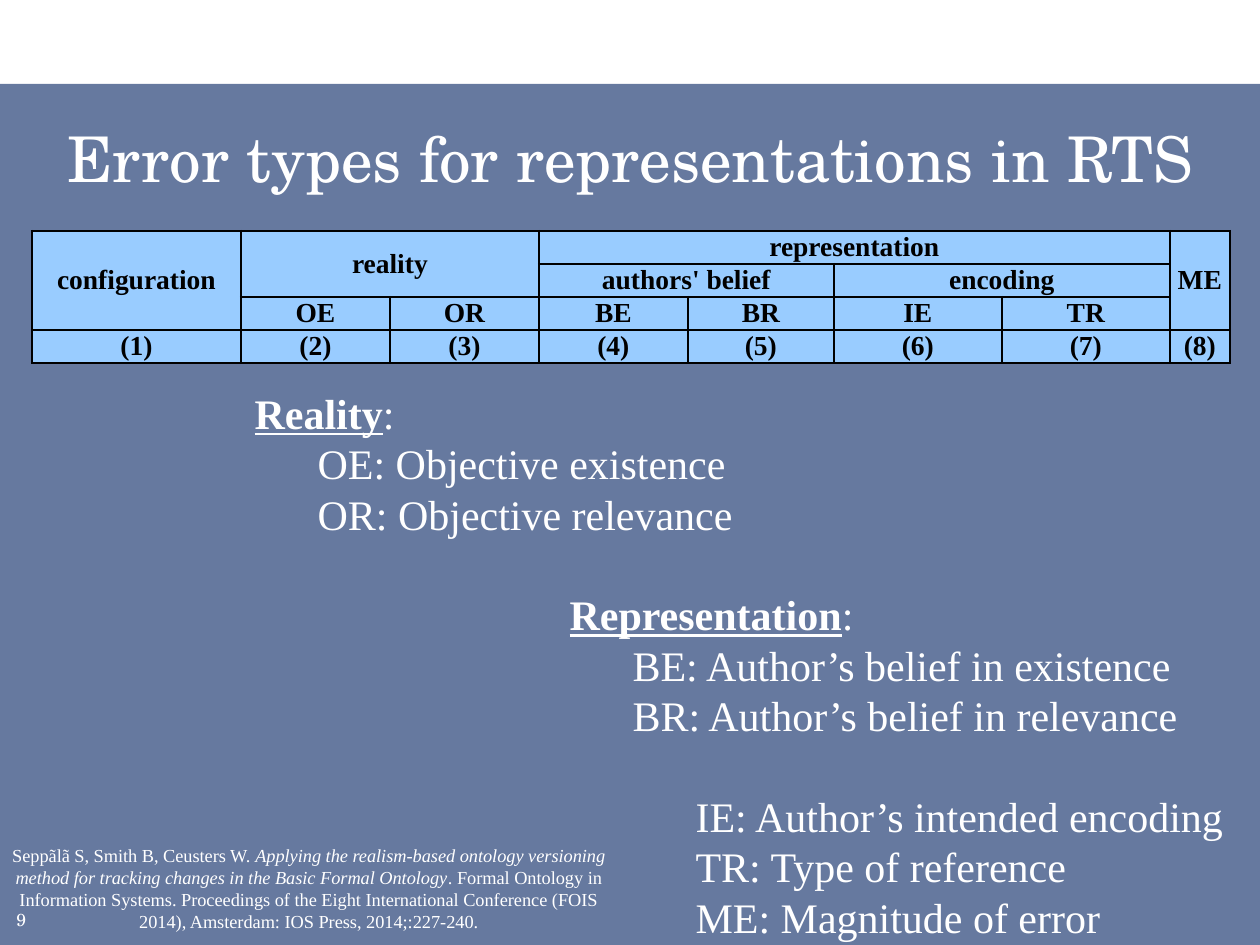
import pptx
import pptx.util
import pptx.dml.color
import pptx.enum.shapes
import pptx.enum.text
import pptx.oxml
import pptx.oxml.ns

PIXEL = 914400 // 126
SERIF = "Times New Roman"
DISPLAY = "TeX Gyre Schola"
CENTER = pptx.enum.text.PP_ALIGN.CENTER
MIDDLE = pptx.enum.text.MSO_ANCHOR.MIDDLE

COLUMNS = [209, 149, 149, 149, 146, 168, 168, 60]
ROW_HEIGHT = 33
# (row, column, row span, column span, text)
HEADINGS = [
    (0, 0, 3, 1, "configuration"),
    (0, 1, 2, 2, "reality"),
    (0, 3, 1, 4, "representation"),
    (0, 7, 3, 1, "ME"),
    (1, 3, 1, 2, "authors' belief"),
    (1, 5, 1, 2, "encoding"),
]
CODES = ["OE", "OR", "BE", "BR", "IE", "TR"]

# (level, indent in px, heading, text, starts a group)
DEFINITIONS = [
    (0, 0, "Reality", ":", False),
    (1, 63, "", "OE: Objective existence", False),
    (1, 63, "", "OR: Objective relevance", False),
    (5, 315, "Representation", ":", True),
    (6, 378, "", "BE: Author’s belief in existence", False),
    (6, 378, "", "BR: Author’s belief in relevance", False),
    (7, 441, "", "IE: Author’s intended encoding", True),
    (7, 441, "", "TR: Type of reference", False),
    (7, 441, "", "ME: Magnitude of error", False),
]
CITATION = [
    ("Seppãlã S, Smith B, Ceusters W. ", False),
    ("Applying the realism-based ontology versioning method for tracking "
     "changes in the Basic Formal Ontology", True),
    (". Formal Ontology in Information Systems. Proceedings of the Eight "
     "International Conference (FOIS 2014), Amsterdam: IOS Press, "
     "2014;:227-240.", False),
]


def px(length):
    return pptx.util.Emu(length * PIXEL)


def color(value):
    return pptx.dml.color.RGBColor.from_string(value)


def place(shape, left, top, width, height):
    shape.left, shape.top = px(left), px(top)
    shape.width, shape.height = px(width), px(height)


def add_text(paragraph, text, size, font=SERIF, fill="FFFFFF",
             bold=False, italic=False, underline=False):
    run = paragraph.add_run()
    run.text = text
    run.font.size = pptx.util.Pt(size)
    run.font.name = font
    run.font.color.rgb = color(fill)
    run.font.bold, run.font.italic = bold, italic
    run.font.underline = underline


def add_background(slide):
    shape = slide.shapes.add_shape(
        pptx.enum.shapes.MSO_SHAPE.RECTANGLE, px(0), px(84), px(1260), px(861))
    shape.shadow.inherit = False
    shape.fill.solid()
    shape.fill.fore_color.rgb = color("002060")
    shape.line.fill.background()
    fill = shape._element.spPr.find(".//" + pptx.oxml.ns.qn("a:srgbClr"))
    fill.append(pptx.oxml.parse_xml(
        f'<a:alpha {pptx.oxml.ns.nsdecls("a")} val="60000"/>'))
    slide.shapes._spTree.insert(2, shape._element)


def add_box(slide, left, top, width, height):
    """Add a wrapping text box and return its first paragraph."""
    box = slide.shapes.add_textbox(px(left), px(top), px(width), px(height))
    box.text_frame.word_wrap = True
    return box.text_frame.paragraphs[0]


def fill_title(title):
    place(title, 32, 105, 1197, 105)
    title.text_frame.vertical_anchor = MIDDLE
    paragraph = title.text_frame.paragraphs[0]
    paragraph.alignment = CENTER
    add_text(paragraph, "Error types for representations in RTS", 36, DISPLAY)


def add_borders(cell):
    properties = cell._tc.get_or_add_tcPr()
    for position, side in enumerate(["lnL", "lnR", "lnT", "lnB"]):
        properties.insert(position, pptx.oxml.parse_xml(
            f'<a:{side} {pptx.oxml.ns.nsdecls("a")} w="19050"><a:solidFill>'
            f'<a:srgbClr val="000000"/></a:solidFill></a:{side}>'))


def fill_cell(cell, text):
    paragraph = cell.text_frame.paragraphs[0]
    paragraph.alignment = CENTER
    add_text(paragraph, text, 15.7, fill="000000", bold=True)


def add_error_table(slide):
    table = slide.shapes.add_table(
        4, len(COLUMNS), px(32), px(231),
        px(sum(COLUMNS)), px(4 * ROW_HEIGHT)).table
    table.first_row = table.horz_banding = False
    for column, width in zip(table.columns, COLUMNS):
        column.width = px(width)
    for row in table.rows:
        row.height = px(ROW_HEIGHT)
    for cell in table.iter_cells():
        cell.margin_left = cell.margin_right = 0
        cell.margin_top = cell.margin_bottom = 0
        cell.vertical_anchor = MIDDLE
        cell.fill.solid()
        cell.fill.fore_color.rgb = color("99CCFF")
        add_borders(cell)
    for row, column, height, width, text in HEADINGS:
        cell = table.cell(row, column)
        cell.merge(table.cell(row + height - 1, column + width - 1))
        fill_cell(cell, text)
    for column, code in enumerate(CODES, start=1):
        fill_cell(table.cell(2, column), code)
    for column in range(len(COLUMNS)):
        fill_cell(table.cell(3, column), f"({column + 1})")


def fill_definitions(body):
    place(body, 242, 381, 1018, 572)
    frame = body.text_frame
    frame.auto_size = pptx.enum.text.MSO_AUTO_SIZE.NONE
    line = pptx.util.Pt(28.8)
    for number, (level, indent, heading, text, group) in enumerate(DEFINITIONS):
        paragraph = frame.add_paragraph() if number else frame.paragraphs[0]
        paragraph.level = level
        properties = paragraph._p.get_or_add_pPr()
        properties.set("marL", str(px(indent)))
        properties.set("indent", "0")
        properties.append(pptx.oxml.parse_xml(
            f'<a:buNone {pptx.oxml.ns.nsdecls("a")}/>'))
        paragraph.line_spacing = line
        paragraph.space_before = line if group else pptx.util.Pt(0)
        if heading:
            add_text(paragraph, heading, 24, bold=True, underline=True)
        add_text(paragraph, text, 24)


def add_citation(slide):
    paragraph = add_box(slide, -10, 838, 630, 102)
    paragraph.alignment = CENTER
    paragraph.line_spacing = pptx.util.Pt(12.6)
    paragraph._p.get_or_add_pPr().set("marL", str(px(8)))
    for text, italic in CITATION:
        add_text(paragraph, text, 10.5, italic=italic)


def main():
    presentation = pptx.Presentation()
    presentation.slide_width, presentation.slide_height = px(1260), px(945)
    slide = presentation.slides.add_slide(presentation.slide_layouts[1])
    add_background(slide)
    add_text(add_box(slide, 4, 903, 59, 32), "9", 10, DISPLAY)
    fill_title(slide.shapes.title)
    add_error_table(slide)
    fill_definitions(slide.placeholders[1])
    add_citation(slide)
    presentation.save("out.pptx")


if __name__ == "__main__":
    main()
